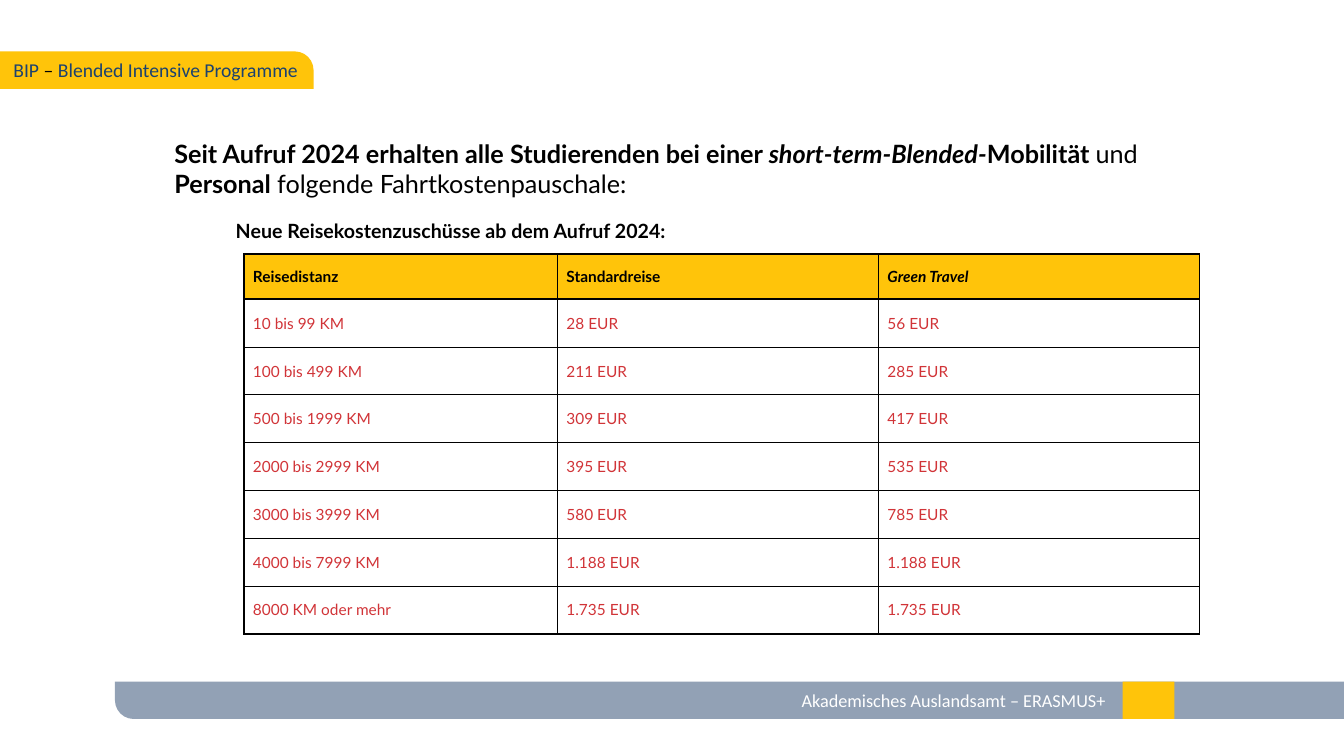
from collections import namedtuple
from pptx import Presentation
from pptx.dml.color import RGBColor
from pptx.enum.shapes import MSO_SHAPE as Preset
from pptx.enum.text import MSO_ANCHOR as Anchor, PP_ALIGN as Align
from pptx.oxml import parse_xml
from pptx.oxml.ns import nsdecls
from pptx.util import Inches, Pt

WIDTH, HEIGHT = Inches(13.33), Inches(7.5)
COL, ROW = WIDTH / 100, HEIGHT / 100
Box = namedtuple("Box", "x y w h")

YELLOW = RGBColor(0xFF, 0xC4, 0x0A)
SLATE = RGBColor(0x92, 0xA1, 0xB5)
NAVY = RGBColor(0x1C, 0x42, 0x6F)
RED = RGBColor(0xD1, 0x34, 0x38)
BLACK = RGBColor(0, 0, 0)
WHITE = RGBColor(0xFF, 0xFF, 0xFF)

THIN, THICK = 0.75, 1.5
HEADER_ROW = 6
COLUMN_SHARES = (0.328, 0.336, 0.336)
FARES = [
    ("Reisedistanz", "Standardreise", "Green Travel"),
    ("10 bis 99 KM", "28 EUR", "56 EUR"),
    ("100 bis 499 KM", "211 EUR", "285 EUR"),
    ("500 bis 1999 KM", "309 EUR", "417 EUR"),
    ("2000 bis 2999 KM", "395 EUR", "535 EUR"),
    ("3000 bis 3999 KM", "580 EUR", "785 EUR"),
    ("4000 bis 7999 KM", "1.188 EUR", "1.188 EUR"),
    ("8000 KM oder mehr", "1.735 EUR", "1.735 EUR"),
]


def place(box):
    return [round(v) for v in (box.x * COL, box.y * ROW, box.w * COL, box.h * ROW)]


def write(frame, runs, name, size, color=BLACK, align=Align.LEFT):
    paragraph = frame.paragraphs[0]
    paragraph.alignment = align
    for text, extra in runs:
        run = paragraph.add_run()
        run.text = text
        style = {"name": name, "size": Pt(size), "bold": False, "italic": False, **extra}
        run.font.color.rgb = style.pop("color", color)
        for key, value in style.items():
            setattr(run.font, key, value)


def add_band(slide, box, preset, color):
    band = slide.shapes.add_shape(preset, *place(box))
    band.shadow.inherit = False
    band.fill.solid()
    band.fill.fore_color.rgb = color
    band.line.fill.background()
    if preset == Preset.ROUND_1_RECTANGLE:
        band.adjustments[0] = 0.5
    return band


def add_text(slide, box, runs, name, size, anchor=Anchor.MIDDLE, **look):
    frame = slide.shapes.add_textbox(*place(box)).text_frame
    frame.word_wrap = True
    frame.vertical_anchor = anchor
    write(frame, runs, name, size, **look)


def build_topic_tab(slide, box):
    tab = add_band(slide, box, Preset.ROUND_1_RECTANGLE, YELLOW)
    tab.text_frame.margin_left = 0
    tab.text_frame.vertical_anchor = Anchor.MIDDLE
    write(tab.text_frame,
          [("BIP ", {}), ("– ", {"color": BLACK}), ("Blended Intensive Programme", {})],
          "Calibri", 14, NAVY, Align.RIGHT)


def build_footer(slide, box):
    bar = add_band(slide, box, Preset.ROUND_1_RECTANGLE, SLATE)
    bar.rotation = 180
    add_text(slide, box._replace(x=box.x + 0.37 * box.w, w=0.447 * box.w),
             [("Akademisches Auslandsamt – ERASMUS+ ", {})],
             "Calibri", 13, color=WHITE, align=Align.RIGHT)
    add_band(slide, box._replace(x=box.x + 0.82 * box.w, w=0.042 * box.w),
             Preset.RECTANGLE, YELLOW)


def build_intro(slide, box):
    bold = {"bold": True}
    add_text(slide, box, [
        ("Seit Aufruf 2024 erhalten alle Studierenden bei einer ", bold),
        ("short-term-Blended-", {"bold": True, "italic": True}),
        ("Mobilität ", bold),
        ("und ", {}),
        ("Personal ", bold),
        ("folgende Fahrtkostenpauschale:", {}),
    ], "Lato", 18, Anchor.TOP)


def set_borders(cell, widths):
    properties = cell._tc.get_or_add_tcPr()
    for position, (side, width) in enumerate(widths.items()):
        properties.insert(position, parse_xml(
            f'<a:{side} {nsdecls("a")} w="{Pt(width)}"><a:solidFill>'
            f'<a:srgbClr val="{BLACK}"/></a:solidFill></a:{side}>'))


def build_fares(slide, box):
    last_row, last_col = len(FARES) - 1, len(COLUMN_SHARES) - 1
    table = slide.shapes.add_table(len(FARES), len(COLUMN_SHARES), *place(box)).table
    table.first_row = table.horz_banding = False
    for column, share in zip(table.columns, COLUMN_SHARES):
        column.width = round(share * box.w * COL)
    for r, fares in enumerate(FARES):
        header = r == 0
        height = HEADER_ROW if header else (box.h - HEADER_ROW) / last_row
        table.rows[r].height = round(height * ROW)
        for c, text in enumerate(fares):
            cell = table.cell(r, c)
            cell.vertical_anchor = Anchor.MIDDLE
            cell.margin_left = cell.margin_right = Inches(0.09)
            if header:
                cell.fill.solid()
                cell.fill.fore_color.rgb = YELLOW
            else:
                cell.fill.background()
            style = {"bold": header, "italic": header and c == last_col}
            write(cell.text_frame, [(text, style)], "Lato", 11, BLACK if header else RED)
            set_borders(cell, {
                "lnL": THICK if c == 0 else THIN,
                "lnR": THICK if c == last_col else THIN,
                "lnT": THICK if r <= 1 else THIN,
                "lnB": THICK if r in (0, last_row) else THIN,
            })


def build_caption(slide, box):
    add_text(slide, box, [("Neue Reisekostenzuschüsse ab dem Aufruf 2024:", {"bold": True})],
             "Lato", 14)


def main():
    deck = Presentation()
    deck.slide_width, deck.slide_height = WIDTH, HEIGHT
    slide = deck.slides.add_slide(deck.slide_layouts[6])
    build_topic_tab(slide, Box(0, 6.8, 23.33, 4.95))
    build_footer(slide, Box(8.55, 90.15, 91.45, 4.95))
    build_intro(slide, Box(12.23, 17.6, 75.6, 13.5))
    build_fares(slide, Box(18.15, 33.6, 71.1, 50.25))
    build_caption(slide, Box(16.8, 28, 50.3, 5))
    deck.save("out.pptx")


if __name__ == "__main__":
    main()
